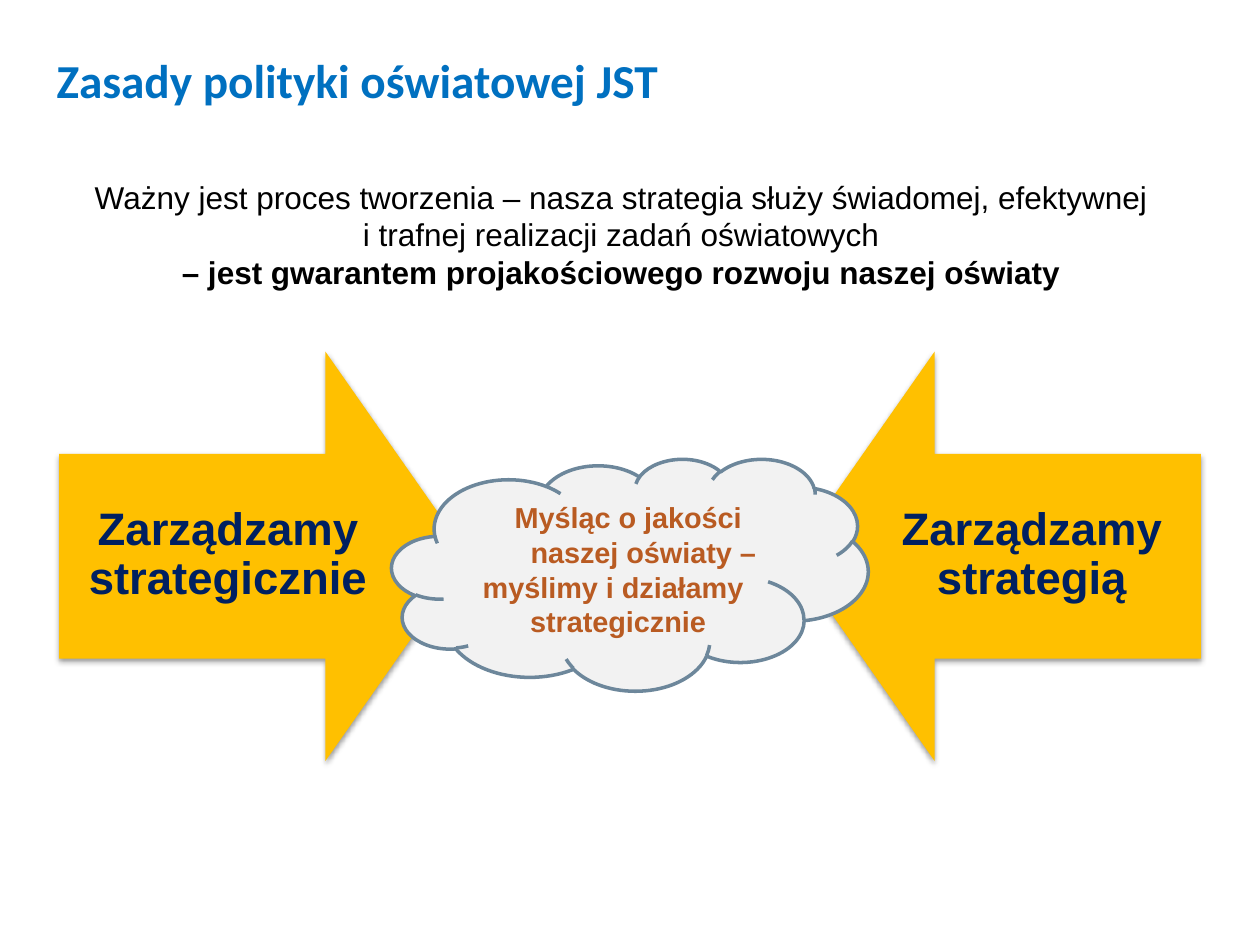
from dataclasses import dataclass

import pptx
import pptx.util
import pptx.dml.color
import pptx.enum.shapes
import pptx.enum.text
import pptx.oxml
import pptx.oxml.ns
from pptx.util import Inches

COLORS = {
    "title": "0070C0",
    "body": "000000",
    "arrow": "FFC000",
    "label": "002060",
    "cloud": "F2F2F2",
    "outline": "6D879B",
    "thought": "B95B22",
}
ALIGN = pptx.enum.text.PP_ALIGN
ANCHOR = pptx.enum.text.MSO_ANCHOR
SHAPE = pptx.enum.shapes.MSO_SHAPE

ARROW_TOP, ARROW_SIZE = 2.79, 3.25
LABEL_TOP, LABEL_WIDTH, LABEL_HEIGHT = 3.6, 2.68, 1.62


@dataclass(frozen=True)
class Arrow:
    label: str
    left: float
    label_left: float
    rotation: int


@dataclass(frozen=True)
class Line:
    text: str
    indent: float = 0
    hanging: float = 0
    bold: bool = False


ARROWS = [
    Arrow("Zarządzamy strategicznie", 0.47, 0.47, 270),
    Arrow("Zarządzamy strategią", 6.28, 6.85, 90),
]
INTRO = [
    Line("Ważny jest proces tworzenia – nasza strategia służy świadomej, efektywnej", 0.52, 0.52),
    Line("i trafnej realizacji zadań oświatowych", 0.52, 0.52),
    Line("– jest gwarantem projakościowego rozwoju naszej oświaty", 0.52, 0.52, bold=True),
]
THOUGHT = [
    Line("Myśląc o jakości", 0.24, bold=True),
    Line("naszej oświaty –", 0.48, bold=True),
    Line("myślimy i działamy", bold=True),
    Line("strategicznie", 0.08, bold=True),
]


def rgb(name: str) -> pptx.dml.color.RGBColor:
    return pptx.dml.color.RGBColor.from_string(COLORS[name])


def set_font(paragraph, size: float, color: str, bold: bool, family: str = "Arial") -> None:
    font = paragraph.font
    font.name, font.size, font.bold = family, pptx.util.Pt(size), bold
    font.color.rgb = rgb(color)


def write_lines(frame, lines: list[Line], size: float, color: str) -> None:
    """Fill a text frame with centred, indented paragraphs."""
    frame.word_wrap = True
    for index, line in enumerate(lines):
        paragraph = frame.add_paragraph() if index else frame.paragraphs[0]
        paragraph.text = line.text
        paragraph.alignment = ALIGN.CENTER
        if line.indent:
            properties = paragraph._p.get_or_add_pPr()
            properties.set("marL", str(Inches(line.indent)))
            properties.set("indent", str(-Inches(line.hanging)))
        set_font(paragraph, size, color, line.bold)


def add_soft_shadow(shape) -> None:
    shape.shadow.inherit = False
    effects = shape._element.spPr.find(pptx.oxml.ns.qn("a:effectLst"))
    effects.append(pptx.oxml.parse_xml(
        f'<a:outerShdw {pptx.oxml.ns.nsdecls("a")} blurRad="{pptx.util.Pt(3.1)}" '
        f'dist="{pptx.util.Pt(1.6)}" dir="5400000" rotWithShape="0">'
        '<a:srgbClr val="000000"><a:alpha val="38000"/></a:srgbClr></a:outerShdw>'
    ))


def draw_arrow(shapes, arrow: Arrow) -> None:
    body = shapes.add_shape(SHAPE.DOWN_ARROW, Inches(arrow.left), Inches(ARROW_TOP),
                            Inches(ARROW_SIZE), Inches(ARROW_SIZE))
    body.rotation = arrow.rotation
    body.adjustments[0], body.adjustments[1] = 0.5, 0.35
    body.fill.solid()
    body.fill.fore_color.rgb = rgb("arrow")
    body.line.fill.background()
    add_soft_shadow(body)

    label = shapes.add_textbox(Inches(arrow.label_left), Inches(LABEL_TOP),
                               Inches(LABEL_WIDTH), Inches(LABEL_HEIGHT))
    frame = label.text_frame
    frame.margin_left = frame.margin_right = frame.margin_top = frame.margin_bottom = Inches(0.2)
    frame.vertical_anchor = ANCHOR.MIDDLE
    write_lines(frame, [Line(arrow.label, bold=True)], 26, "label")
    frame.paragraphs[0].line_spacing = 0.9


def draw_cloud(shapes) -> None:
    cloud = shapes.add_shape(SHAPE.CLOUD, Inches(3.11), Inches(3.64), Inches(3.78), Inches(1.84))
    cloud.shadow.inherit = False
    cloud.fill.solid()
    cloud.fill.fore_color.rgb = rgb("cloud")
    cloud.line.color.rgb = rgb("outline")
    cloud.line.width = pptx.util.Pt(2)
    cloud.text_frame.vertical_anchor = ANCHOR.MIDDLE
    write_lines(cloud.text_frame, THOUGHT, 16.5, "thought")


def write_title(title) -> None:
    title.left, title.top = Inches(0.35), Inches(0.36)
    title.width, title.height = Inches(5.91), Inches(0.99)
    frame = title.text_frame
    frame.text = "Zasady polityki oświatowej JST"
    frame.word_wrap = True
    frame.auto_size = pptx.enum.text.MSO_AUTO_SIZE.NONE
    frame.vertical_anchor = ANCHOR.TOP
    frame.paragraphs[0].alignment = ALIGN.LEFT
    set_font(frame.paragraphs[0], 27, "title", True, "Calibri")


def main() -> None:
    deck = pptx.Presentation()
    deck.slide_width, deck.slide_height = Inches(10), Inches(7.5)
    slide = deck.slides.add_slide(deck.slide_layouts[5])
    write_title(slide.shapes.title)

    opposing_arrows = slide.shapes.add_group_shape()
    for arrow in ARROWS:
        draw_arrow(opposing_arrows.shapes, arrow)
    draw_cloud(slide.shapes)

    intro = slide.shapes.add_textbox(Inches(0.2), Inches(1.36), Inches(9.46), Inches(1.01))
    write_lines(intro.text_frame, INTRO, 18, "body")
    deck.save("out.pptx")


if __name__ == "__main__":
    main()
